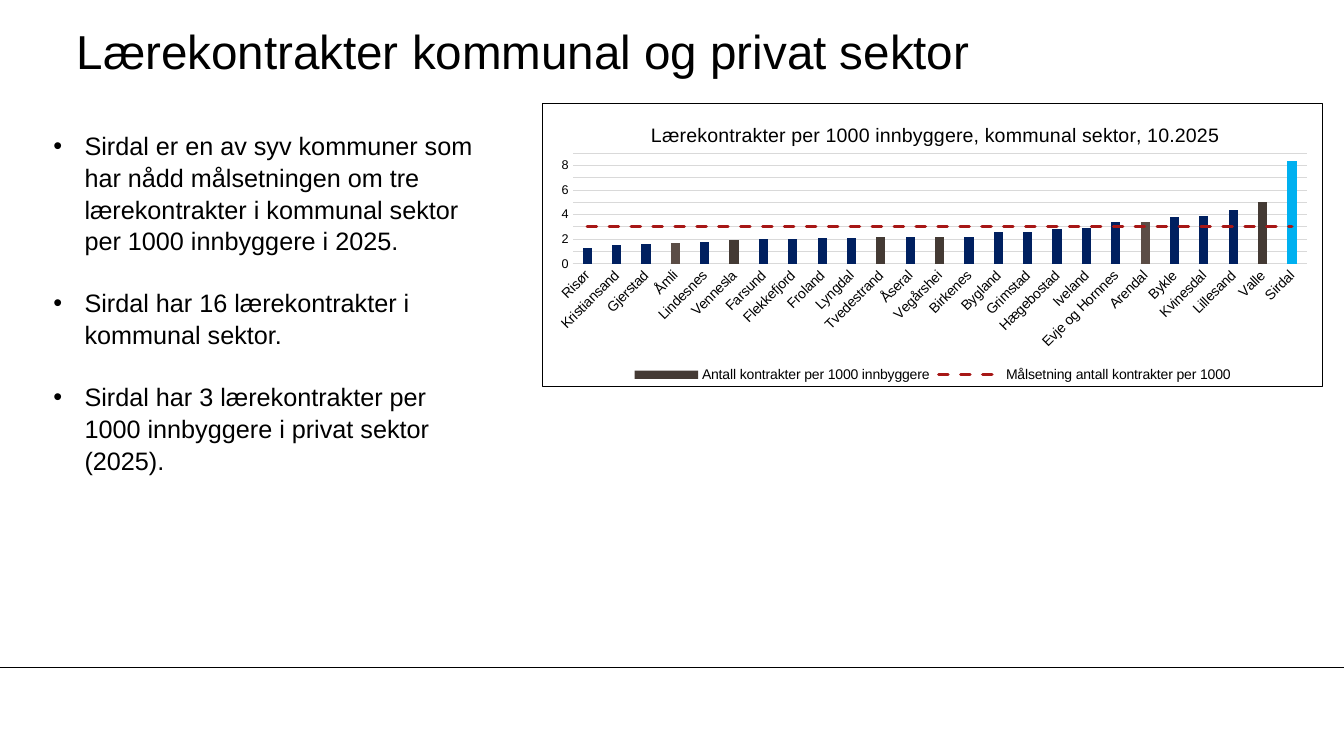
from lxml import etree
from pptx import Presentation
from pptx.chart.data import CategoryChartData
from pptx.dml.color import RGBColor
from pptx.enum.chart import XL_CHART_TYPE, XL_LEGEND_POSITION, XL_TICK_MARK
from pptx.enum.shapes import MSO_CONNECTOR
from pptx.enum.text import MSO_ANCHOR, MSO_AUTO_SIZE, PP_ALIGN
from pptx.oxml import parse_xml
from pptx.oxml.ns import nsdecls, qn
from pptx.util import Inches, Pt

NAVY, BROWN, DARK, SKY, RED, GRAY = "002060", "5B4D46", "443A34", "00B0F0", "A71716", "D9D9D9"
BULLETS = [
    "Sirdal er en av syv kommuner som har nådd målsetningen om tre "
    "lærekontrakter i kommunal sektor per 1000 innbyggere i 2025.",
    "Sirdal har 16 lærekontrakter i kommunal sektor.",
    "Sirdal har 3 lærekontrakter per 1000 innbyggere i privat sektor (2025).",
]
CONTRACTS = {
    "Risør": 1.3, "Kristiansand": 1.5, "Gjerstad": 1.6, "Åmli": 1.7, "Lindesnes": 1.8,
    "Vennesla": 1.9, "Farsund": 2, "Flekkefjord": 2, "Froland": 2.1, "Lyngdal": 2.1,
    "Tvedestrand": 2.2, "Åseral": 2.2, "Vegårshei": 2.2, "Birkenes": 2.2, "Bygland": 2.6,
    "Grimstad": 2.6, "Hægebostad": 2.8, "Iveland": 2.9, "Evje og Hornnes": 3.4,
    "Arendal": 3.4, "Bykle": 3.8, "Kvinesdal": 3.9, "Lillesand": 4.4, "Valle": 5,
    "Sirdal": 8.4,
}
BAR_COLORS = {
    "Åmli": BROWN, "Arendal": BROWN, "Sirdal": SKY,
    "Vennesla": DARK, "Tvedestrand": DARK, "Vegårshei": DARK, "Valle": DARK,
}
TARGET = 3


def color(value):
    return RGBColor.from_string(value)


def set_font(font, size):
    font.name = "Arial"
    font.size = Pt(size)
    font.bold = False
    font.color.rgb = color("000000")


deck = Presentation()
deck.slide_width, deck.slide_height = Inches(13.33), Inches(7.5)
page = deck.slides.add_slide(deck.slide_layouts[5])

# Footer rule
rule = page.shapes.add_connector(
    MSO_CONNECTOR.STRAIGHT, Inches(0), Inches(6.62), Inches(13.33), Inches(6.62))
rule.line.color.rgb = color("000000")
rule.line.width = Pt(0.75)
etree.SubElement(rule._element.spPr, qn("a:effectLst"))

# Title
title = page.shapes.title
title.left, title.top, title.width, title.height = map(Inches, (0.76, 0.13, 11.1, 0.75))
frame = title.text_frame
frame.text = "Lærekontrakter kommunal og privat sektor"
frame.auto_size = MSO_AUTO_SIZE.NONE
frame.vertical_anchor = MSO_ANCHOR.MIDDLE
frame.margin_left = frame.margin_right = frame.margin_top = frame.margin_bottom = 0
frame.paragraphs[0].alignment = PP_ALIGN.LEFT
set_font(frame.paragraphs[0].font, 34)

# Bullet list
box = page.shapes.add_textbox(Inches(0.43), Inches(1.23), Inches(4.52), Inches(3.74))
frame = box.text_frame
frame.word_wrap = True
for index, text in enumerate(BULLETS):
    para = frame.paragraphs[0] if index == 0 else frame.add_paragraph()
    para.text = text
    para.line_spacing = 1.05
    if index:
        para.space_before = Pt(21.7)
    properties = para._p.get_or_add_pPr()
    properties.set("marL", str(Inches(0.31)))
    properties.set("indent", str(-Inches(0.31)))
    etree.SubElement(properties, qn("a:buFont"), typeface="Arial")
    etree.SubElement(properties, qn("a:buChar"), char="•")
    set_font(para.font, 18)

# Chart with columns
data = CategoryChartData(number_format="0.0")
data.categories = list(CONTRACTS)
data.add_series("Antall kontrakter per 1000 innbyggere", list(CONTRACTS.values()))
data.add_series("Målsetning antall kontrakter per 1000", [TARGET] * len(CONTRACTS))
chart = page.shapes.add_chart(
    XL_CHART_TYPE.COLUMN_CLUSTERED, Inches(5.38), Inches(1.02), Inches(7.74), Inches(2.82),
    data).chart
set_font(chart.font, 10)
chart.has_title = True
chart.chart_title.text_frame.text = "Lærekontrakter per 1000 innbyggere, kommunal sektor, 10.2025"
set_font(chart.chart_title.text_frame.paragraphs[0].font, 14)
chart.has_legend = True
chart.legend.position = XL_LEGEND_POSITION.BOTTOM
chart.legend.include_in_layout = False
set_font(chart.legend.font, 10)

columns = chart.plots[0]
columns.vary_by_categories = False
columns.gap_width = 219
columns.overlap = -27
bars, target = columns.series
bars.format.fill.solid()
bars.format.fill.fore_color.rgb = color(DARK)
for index, town in enumerate(CONTRACTS):
    fill = bars.points[index].format.fill
    fill.solid()
    fill.fore_color.rgb = color(BAR_COLORS.get(town, NAVY))

# Axes
towns, rates = chart.category_axis, chart.value_axis
for axis, size in ((towns, 10), (rates, 9)):
    axis.major_tick_mark = axis.minor_tick_mark = XL_TICK_MARK.NONE
    set_font(axis.tick_labels.font, size)
towns.format.line.color.rgb = color(GRAY)
towns.format.line.width = Pt(0.75)
towns._element.find(qn("c:txPr")).find(qn("a:bodyPr")).set("rot", "-2700000")
rates.minimum_scale, rates.maximum_scale, rates.major_unit = 0, 9, 1
rates.tick_labels.number_format = "0"
rates.tick_labels.number_format_is_linked = False
rates.format.line.fill.background()
rates.major_gridlines.format.line.color.rgb = color(GRAY)
rates.major_gridlines.format.line.width = Pt(0.75)

# Target series becomes a dashed line on the same axes
target_xml = target._element
invert = target_xml.find(qn("c:invertIfNegative"))
if invert is not None:
    target_xml.remove(invert)
target_xml.find(qn("c:tx")).addnext(parse_xml(
    f'<c:spPr {nsdecls("c", "a")}><a:ln w="28575" cap="rnd"><a:solidFill><a:srgbClr val="{RED}"/>'
    '</a:solidFill><a:prstDash val="dash"/><a:round/></a:ln></c:spPr>'))
target_xml.find(qn("c:spPr")).addnext(parse_xml(
    f'<c:marker {nsdecls("c")}><c:symbol val="none"/></c:marker>'))
etree.SubElement(target_xml, qn("c:smooth"), val="0")
bar_xml = columns._element
line_xml = parse_xml(
    f'<c:lineChart {nsdecls("c")}><c:grouping val="standard"/><c:varyColors val="0"/></c:lineChart>')
line_xml.append(target_xml)
etree.SubElement(line_xml, qn("c:marker"), val="1")
for axis_id in bar_xml.findall(qn("c:axId")):
    etree.SubElement(line_xml, qn("c:axId"), val=axis_id.get("val"))
bar_xml.addnext(line_xml)

# Plot and title places, as shares of the chart area
plot_area = bar_xml.getparent()
title_xml = chart.chart_title._element
for parent, places, inner in (
    (plot_area, {"x": 0.038, "y": 0.176, "w": 0.942, "h": 0.391}, True),
    (title_xml, {"x": 0.134, "y": 0.055}, False),
):
    for old in parent.findall(qn("c:layout")):
        parent.remove(old)
    layout = etree.Element(qn("c:layout"))
    manual = etree.SubElement(layout, qn("c:manualLayout"))
    if inner:
        etree.SubElement(manual, qn("c:layoutTarget"), val="inner")
        parent.insert(0, layout)
    else:
        parent.find(qn("c:tx")).addnext(layout)
    for side in "xy":
        etree.SubElement(manual, qn(f"c:{side}Mode"), val="edge")
    for side, share in places.items():
        etree.SubElement(manual, qn(f"c:{side}"), val=str(share))

# Chart frame
chart._chartSpace.find(qn("c:chart")).addnext(parse_xml(
    f'<c:spPr {nsdecls("c", "a")}><a:solidFill><a:srgbClr val="FFFFFF"/></a:solidFill>'
    '<a:ln w="9525"><a:solidFill><a:srgbClr val="000000"/></a:solidFill></a:ln></c:spPr>'))

deck.save("out.pptx")
